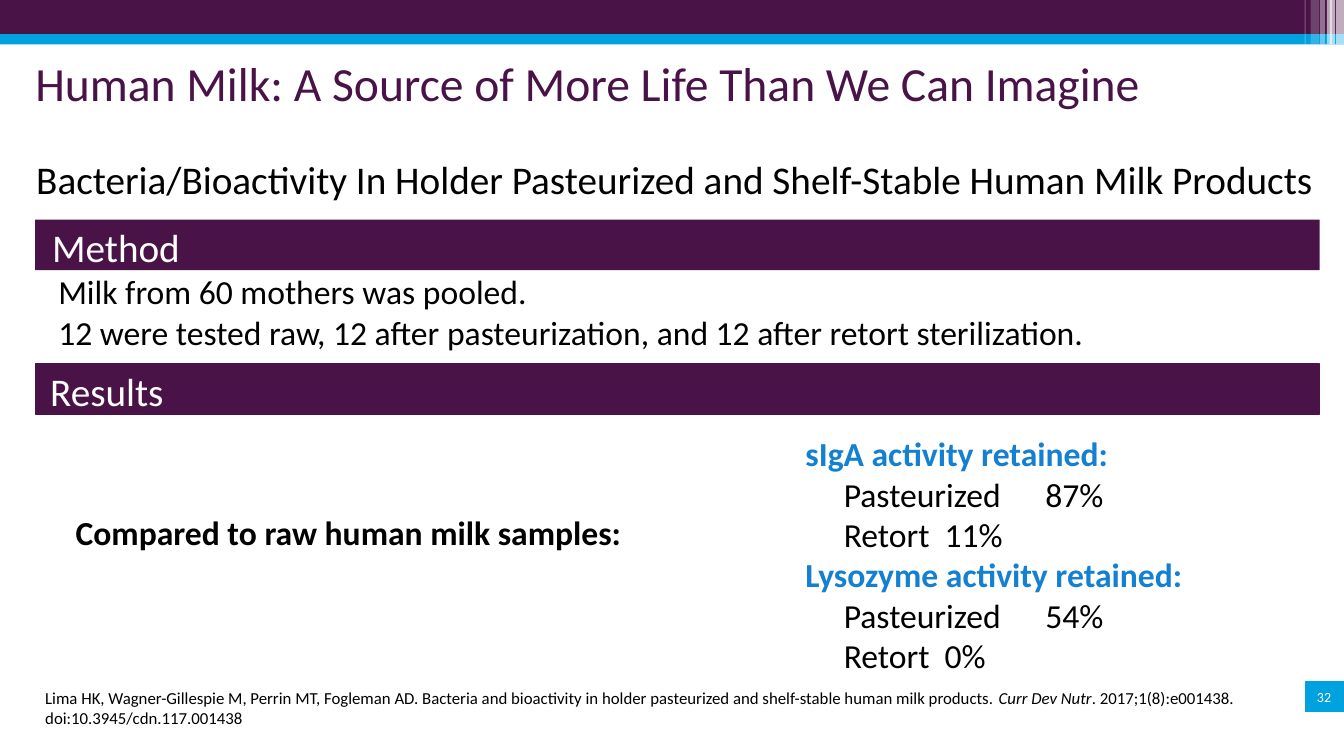
from dataclasses import dataclass
from typing import Any, Optional

from lxml.etree import SubElement
from pptx import Presentation
from pptx.dml.color import RGBColor as RGB
from pptx.enum.shapes import MSO_SHAPE as Shape
from pptx.enum.text import MSO_ANCHOR as Anchor, PP_ALIGN as Align
from pptx.oxml.ns import qn
from pptx.util import Inches, Pt


@dataclass(frozen=True)
class Theme:
    font: str = "Calibri"
    plum: RGB = RGB(0x49, 0x13, 0x47)
    cyan: RGB = RGB(0x00, 0xA1, 0xDF)
    blue: RGB = RGB(0x14, 0x80, 0xD1)
    black: RGB = RGB(0, 0, 0)
    white: RGB = RGB(255, 255, 255)
    title: int = 34
    heading: int = 28
    body: int = 24
    note: int = 12
    number: int = 10


T = Theme()


@dataclass(frozen=True)
class Bar:
    left: float
    top: float
    width: float
    height: float
    color: RGB
    alpha: int = 100
    outlined: bool = False


@dataclass(frozen=True)
class Run:
    text: str
    bold: bool = False
    italic: bool = False
    color: Optional[RGB] = None


@dataclass(frozen=True)
class Para:
    runs: tuple[Run, ...]
    indent: float = 0
    tabs: tuple[tuple[float, str], ...] = ()


@dataclass(frozen=True)
class Block:
    left: float
    top: float
    width: float
    height: float
    paras: tuple[Para, ...]
    size: int
    color: RGB = T.black
    align: Align = Align.LEFT
    anchor: Anchor = Anchor.TOP
    insets: tuple[float, float, float, float] = (0.1, 0.05, 0.1, 0.05)


def line(text: str, indent: float = 0, **style: Any) -> Para:
    return Para((Run(text, **style),), indent)


def activity(name: str, pasteurized: str, retort: str) -> tuple[Para, ...]:
    stops = ((1.12, "l"), (3.48, "r"))
    rows = (("Pasteurized", pasteurized), ("Retort", retort))
    return (line(f"{name} activity retained:", 0.12, bold=True, color=T.blue),
            *(Para((Run(f"\t{label}\t{value}"),), tabs=stops) for label, value in rows))


def draw_bar(slide: Any, bar: Bar) -> None:
    s = slide.shapes.add_shape(Shape.RECTANGLE, Inches(bar.left), Inches(bar.top),
                               Inches(bar.width), Inches(bar.height))
    s.shadow.inherit = False
    s.fill.solid()
    s.fill.fore_color.rgb = bar.color
    if bar.alpha < 100:
        color = s.fill._xPr.find(f".//{qn('a:srgbClr')}")
        SubElement(color, qn("a:alpha"), val=str(bar.alpha * 1000))
    if bar.outlined:
        s.line.color.rgb = bar.color
        s.line.width = Pt(1)
    else:
        s.line.fill.background()


def draw_block(slide: Any, block: Block) -> None:
    s = slide.shapes.add_textbox(Inches(block.left), Inches(block.top),
                                 Inches(block.width), Inches(block.height))
    tf = s.text_frame
    sides = ("margin_left", "margin_top", "margin_right", "margin_bottom")
    frame = {"word_wrap": True, "vertical_anchor": block.anchor}
    frame |= {side: Inches(gap) for side, gap in zip(sides, block.insets)}
    for name, value in frame.items():
        setattr(tf, name, value)
    for i, para in enumerate(block.paras):
        p = tf.add_paragraph() if i else tf.paragraphs[0]
        p.alignment = block.align
        props = p._p.get_or_add_pPr()
        props.set("marL", str(Inches(para.indent)))
        props.set("indent", "0")
        if para.tabs:
            stops = SubElement(props, qn("a:tabLst"))
            for pos, kind in para.tabs:
                SubElement(stops, qn("a:tab"), pos=str(Inches(pos)), algn=kind)
        for run in para.runs:
            r = p.add_run()
            r.text = run.text
            style = {"name": T.font, "size": Pt(block.size),
                     "bold": run.bold, "italic": run.italic}
            for name, value in style.items():
                setattr(r.font, name, value)
            r.font.color.rgb = run.color or block.color


STRIPES = ((13.25, 0.08, 0.44, 65), (13.19, 0.05, 0.44, 65), (13.16, 0.05, 0.44, 60),
           (13.09, 0.05, 0.44, 40), (13, 0.08, 0.44, 20), (12.94, 0.01, 0.64, 30))

BARS = (
    Bar(0, 0, 13.33, 0.34, T.plum),
    Bar(0, 0.34, 13.33, 0.1, T.cyan),
    *(Bar(x, 0, w, h, T.white, alpha) for x, w, h, alpha in STRIPES),
    Bar(12.95, 6.76, 0.39, 0.3, T.cyan, outlined=True),
    Bar(0.35, 2.18, 12.74, 0.5, T.plum),
    Bar(0.35, 3.61, 12.74, 0.5, T.plum, outlined=True),
)

HEADLINE = (0, 0.1, 0, 0)
CITATION = Para((
    Run("Lima HK, Wagner-Gillespie M, Perrin MT, Fogleman AD. Bacteria and bioactivity in "
        "holder pasteurized and shelf-stable human milk products. "),
    Run("Curr Dev Nutr", italic=True),
    Run(". 2017;1(8):e001438. doi:10.3945/cdn.117.001438"),
))

BLOCKS = (
    Block(0.35, 0.44, 12.62, 1.17,
          (line("Human Milk: A Source of More Life Than We Can Imagine"),),
          T.title, T.plum, insets=HEADLINE),
    Block(0.36, 1.44, 12.73, 0.7,
          (line("Bacteria/Bioactivity In Holder Pasteurized and Shelf-Stable "
                "Human Milk Products"),),
          T.heading, insets=HEADLINE),
    Block(0.35, 2.2, 12.74, 0.5, (line("Method", 0.07),),
          T.heading, T.white, anchor=Anchor.MIDDLE),
    Block(0.36, 2.64, 12.73, 0.91,
          (line("Milk from 60 mothers was pooled.", 0.12),
           line("12 were tested raw, 12 after pasteurization, and 12 after "
                "retort sterilization.", 0.12)),
          T.body),
    Block(0.35, 3.63, 12.74, 0.5, (line("Results", 0.05),),
          T.heading, T.white, anchor=Anchor.MIDDLE),
    Block(0.45, 4.63, 5.89, 1.43,
          (line("Compared to raw human milk samples:", 0.12, bold=True),),
          T.body, align=Align.CENTER, insets=(0.1, 0.45, 0.1, 0.05)),
    Block(7.77, 4.25, 5.11, 2.52,
          activity("sIgA", "87%", "11%") + activity("Lysozyme", "54%", "0%"), T.body),
    Block(0.35, 6.77, 12.45, 0.5, (CITATION,), T.note),
    Block(12.88, 6.76, 0.42, 0.3, (line("32"),), T.number, T.white,
          Align.RIGHT, Anchor.MIDDLE),
)


def main() -> None:
    prs = Presentation()
    prs.slide_width, prs.slide_height = Inches(13.33), Inches(7.5)
    slide = prs.slides.add_slide(prs.slide_layouts[6])
    for bar in BARS:
        draw_bar(slide, bar)
    for block in BLOCKS:
        draw_block(slide, block)
    prs.save("out.pptx")


if __name__ == "__main__":
    main()
